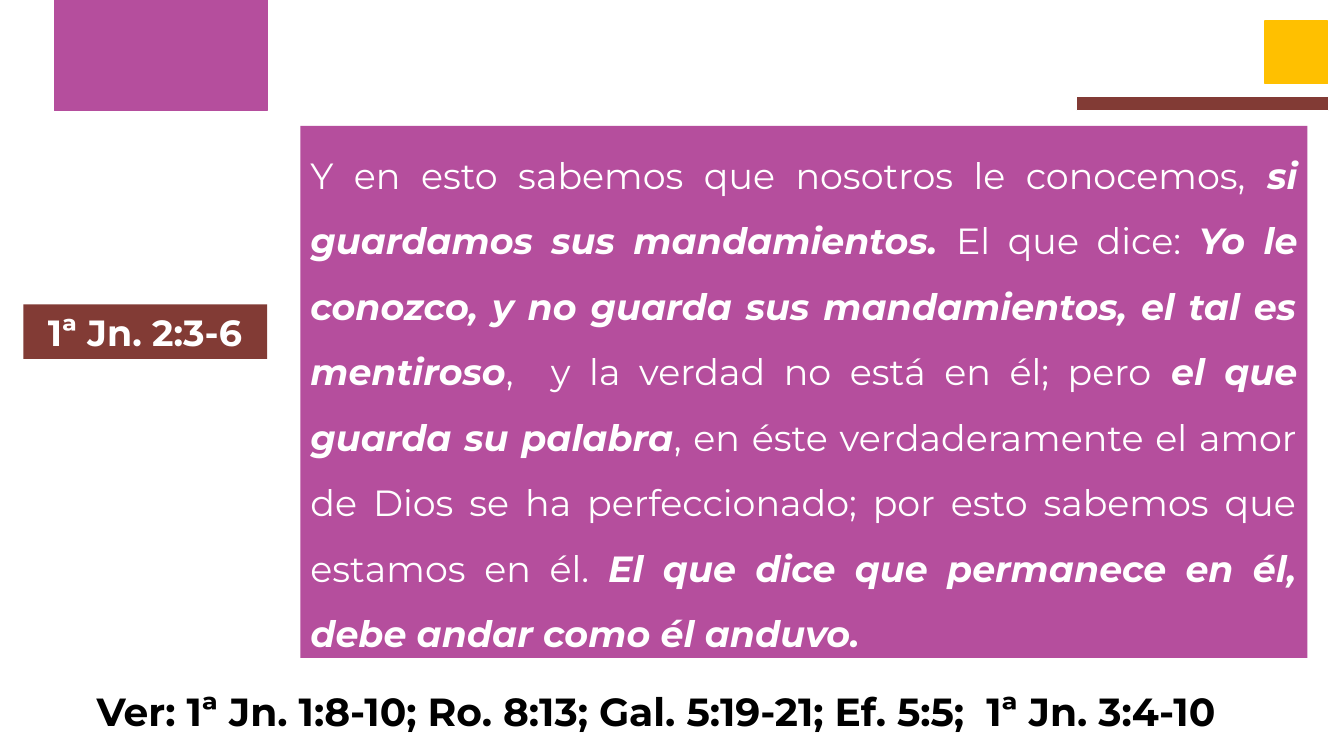
from pptx import Presentation
from pptx.dml.color import RGBColor
from pptx.enum import shapes, text
from pptx.util import Pt

COLORS = {"purple": "B54E9D", "brown": "823B35", "gold": "FFC000",
          "white": "FFFFFF", "black": "000000"}
FONT = "Montserrat"
PASSAGE = [
    ("Y en esto sabemos que nosotros le conocemos, ", False),
    ("si guardamos sus mandamientos.", True),
    (" El que dice: ", False),
    ("Yo le conozco, y no guarda sus mandamientos, el tal es mentiroso", True),
    (",  y la verdad no está en él; pero ", False),
    ("el que guarda su palabra", True),
    (", en éste verdaderamente el amor de Dios se ha perfeccionado; "
     "por esto sabemos que estamos en él. ", False),
    ("El que dice que permanece en él, debe andar como él anduvo.", True),
]


def rgb(name):
    """Return the named colour."""
    return RGBColor.from_string(COLORS[name])


def add_block(s, box, fill, line=None):
    """Add a plain filled rectangle, outlined if a line colour is given."""
    sp = s.shapes.add_shape(shapes.MSO_SHAPE.RECTANGLE, *map(Pt, box))
    sp.shadow.inherit = False
    sp.fill.solid()
    sp.fill.fore_color.rgb = rgb(fill)
    if line:
        sp.line.color.rgb = rgb(line)
        sp.line.width = Pt(1)
    else:
        sp.line.fill.background()
    return sp


def format_text(sp, size, color, align, anchor=text.MSO_ANCHOR.TOP):
    """Format the text frame of a shape and return its first paragraph."""
    tf = sp.text_frame
    tf.word_wrap = True
    tf.auto_size = text.MSO_AUTO_SIZE.NONE
    tf.vertical_anchor = anchor
    p = tf.paragraphs[0]
    p.alignment = align
    p.font.name = FONT
    p.font.size = Pt(size)
    p.font.color.rgb = rgb(color)
    return p


def add_decoration(s, width):
    """Place the coloured blocks along the top edge."""
    add_block(s, (width - 56.4, 15.1, 44.7, 44.7), "gold", "gold")
    add_block(s, (width - 191, 69.1, 180, 10), "brown", "white")
    add_block(s, (38.9, 0, 152, 79.2), "purple", "purple")


def add_reference(s, box, label):
    """Turn the title into the verse label."""
    sp = s.shapes.title
    sp.left, sp.top, sp.width, sp.height = map(Pt, box)
    sp.fill.solid()
    sp.fill.fore_color.rgb = rgb("brown")
    sp.text_frame.text = label
    p = format_text(sp, 26, "white", text.PP_ALIGN.CENTER, text.MSO_ANCHOR.MIDDLE)
    p.font.bold = True


def add_passage(s, box, runs):
    """Add the verse panel with its emphasised phrases."""
    sp = add_block(s, box, "purple")
    p = format_text(sp, 26, "white", text.PP_ALIGN.JUSTIFY)
    p.line_spacing = 1.5
    for words, strong in runs:
        r = p.add_run()
        r.text = words
        r.font.bold = r.font.italic = strong


def add_see_also(s, box, words):
    """Add the line of related verses."""
    sp = s.shapes.add_textbox(*map(Pt, box))
    sp.text_frame.text = words
    p = format_text(sp, 28, "black", text.PP_ALIGN.LEFT)
    p.font.bold = True


def main():
    """Build and save the slide."""
    prs = Presentation()
    prs.slide_width, prs.slide_height = Pt(960), Pt(540)
    s = prs.slides.add_slide(prs.slide_layouts[5])
    add_decoration(s, 960)
    add_reference(s, (16.6, 217.4, 174.2, 38.9), "1ª Jn. 2:3-6")
    add_passage(s, (214.6, 90, 719.3, 380), PASSAGE)
    add_see_also(s, (61.9, 487.4, 890, 41),
                 "Ver: 1ª Jn. 1:8-10; Ro. 8:13; Gal. 5:19-21; Ef. 5:5;  1ª Jn. 3:4-10")
    prs.save("out.pptx")


if __name__ == "__main__":
    main()
